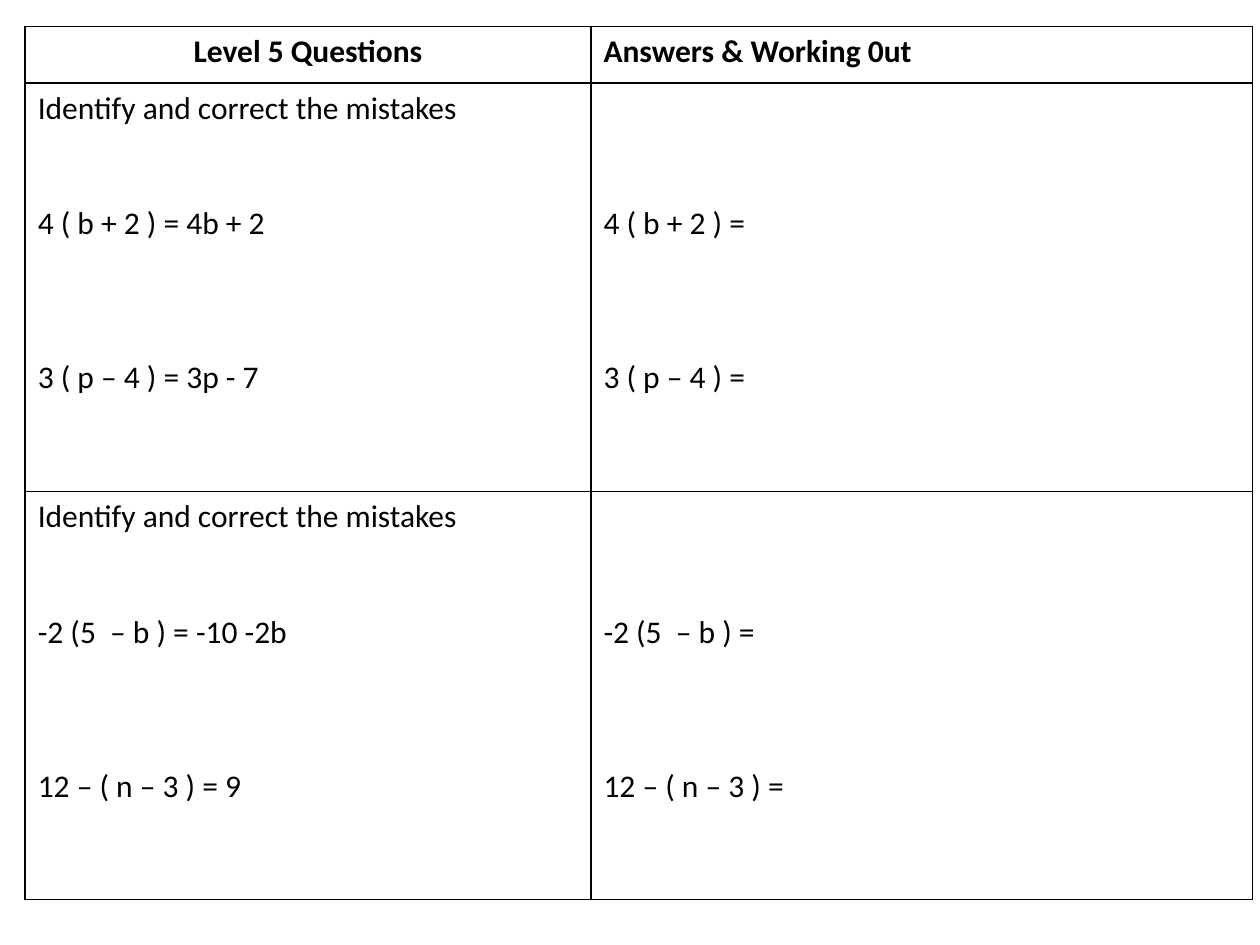
from lxml import etree
from pptx import Presentation
from pptx import util as u
from pptx.dml.color import RGBColor
from pptx.enum import text
from pptx.oxml.ns import qn

BLACK = RGBColor(0x00, 0x00, 0x00)
WHITE = RGBColor(0xFF, 0xFF, 0xFF)
FONT = "Calibri"
LINE_POINTS = 22  # height of one line of 18 pt text
TOP_MARGIN = u.Inches(0.05)

COLUMN_WIDTHS = [4.49, 5.25]
ROW_HEIGHTS = [0.45, 3.24, 3.24]
INSTRUCTION = "Identify and correct the mistakes"

# Each question row: (expression, mistaken answer) pairs
QUESTIONS = [
    [("4 ( b + 2 ) =", "4b + 2"), ("3 ( p – 4 ) =", "3p - 7")],
    [("-2 (5  – b ) =", "-10 -2b"), ("12 – ( n – 3 ) =", "9")],
]


def format_text(paragraph, content, bold=False, align=text.PP_ALIGN.LEFT, gap_lines=0):
    """Write one paragraph, leaving gap_lines of room above it."""
    paragraph.alignment = align
    paragraph.space_before = u.Pt(gap_lines * LINE_POINTS)
    run = paragraph.add_run()
    run.text = content
    run.font.name = FONT
    run.font.size = u.Pt(18)
    run.font.bold = bold
    run.font.color.rgb = BLACK


def style_cell(cell):
    """Give a cell thin black borders and a white fill."""
    properties = cell._tc.get_or_add_tcPr()
    for side in ("lnL", "lnR", "lnT", "lnB"):
        border = etree.SubElement(properties, qn(f"a:{side}"), w=str(u.Pt(1)))
        fill = etree.SubElement(border, qn("a:solidFill"))
        etree.SubElement(fill, qn("a:srgbClr"), val=str(BLACK))
    cell.fill.solid()
    cell.fill.fore_color.rgb = WHITE
    cell.margin_top = TOP_MARGIN


def fill_cell(cell, lines):
    """Write (content, gap above in lines) pairs into a cell."""
    frame = cell.text_frame
    for index, (content, gap) in enumerate(lines):
        paragraph = frame.add_paragraph() if index else frame.paragraphs[0]
        format_text(paragraph, content, gap_lines=gap)


def add_worksheet_table(slide):
    frame = slide.shapes.add_table(
        len(ROW_HEIGHTS), len(COLUMN_WIDTHS), u.Inches(0.2), u.Inches(0.21),
        u.Inches(sum(COLUMN_WIDTHS)), u.Inches(sum(ROW_HEIGHTS)))
    table = frame.table
    table.horz_banding = False
    for column, width in zip(table.columns, COLUMN_WIDTHS):
        column.width = u.Inches(width)
    for row, height in zip(table.rows, ROW_HEIGHTS):
        row.height = u.Inches(height)
    for cell in table.iter_cells():
        style_cell(cell)
    return table


def main():
    presentation = Presentation()
    presentation.slide_width = u.Inches(10)
    presentation.slide_height = u.Inches(7.5)
    slide = presentation.slides.add_slide(presentation.slide_layouts[6])
    table = add_worksheet_table(slide)

    # Header row
    format_text(table.cell(0, 0).text_frame.paragraphs[0], "Level 5 Questions",
                bold=True, align=text.PP_ALIGN.CENTER)
    format_text(table.cell(0, 1).text_frame.paragraphs[0], "Answers & Working 0ut",
                bold=True)

    # Questions on the left, expressions to work out on the right
    for row, ((first, first_answer), (second, second_answer)) in enumerate(QUESTIONS, 1):
        fill_cell(table.cell(row, 0), [
            (INSTRUCTION, 0),
            (f"{first} {first_answer}", 2),
            (f"{second} {second_answer}", 3),
        ])
        working = table.cell(row, 1)
        working.margin_top = TOP_MARGIN + u.Pt(3 * LINE_POINTS)
        fill_cell(working, [(first, 0), (second, 3)])

    presentation.save("out.pptx")


if __name__ == "__main__":
    main()
